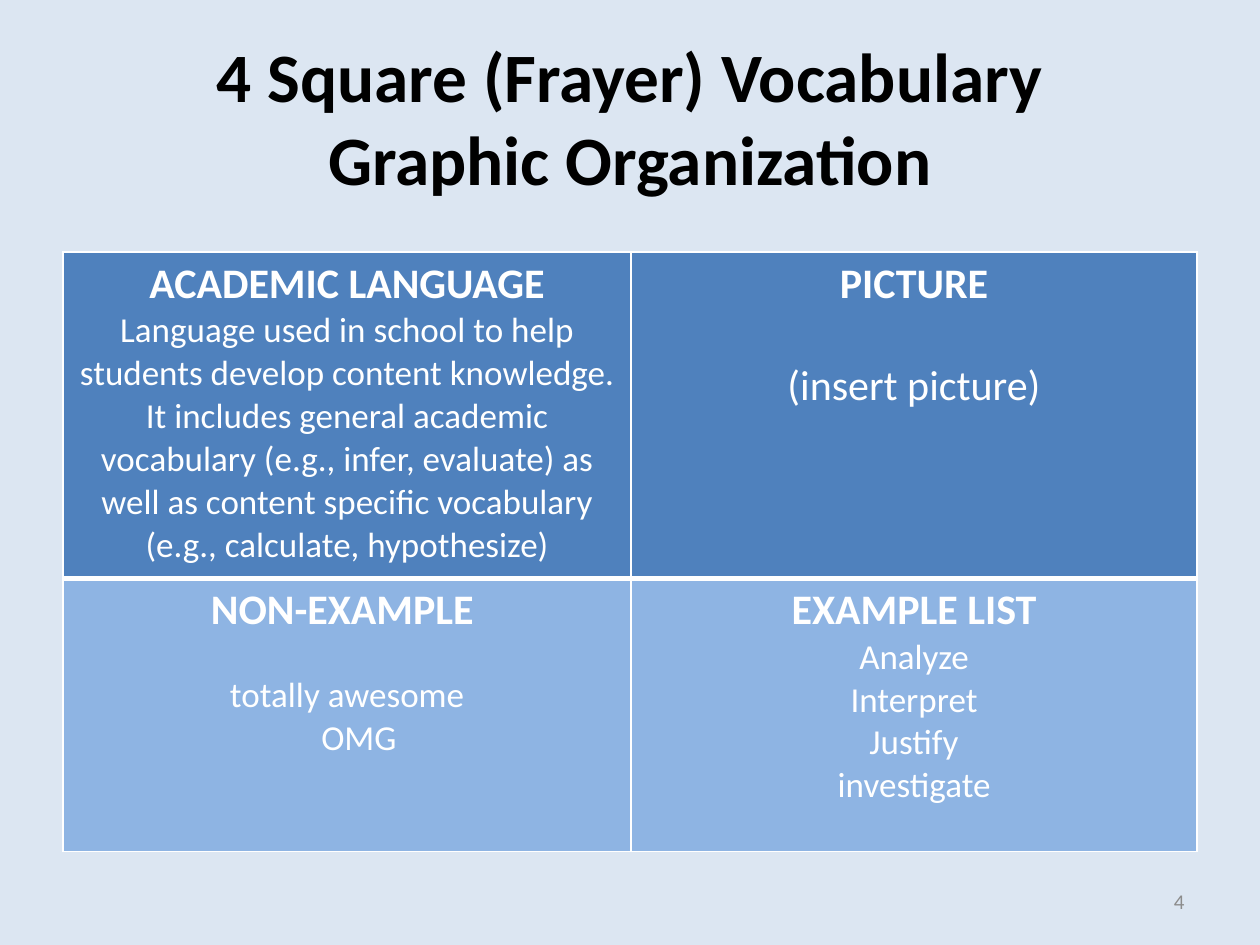
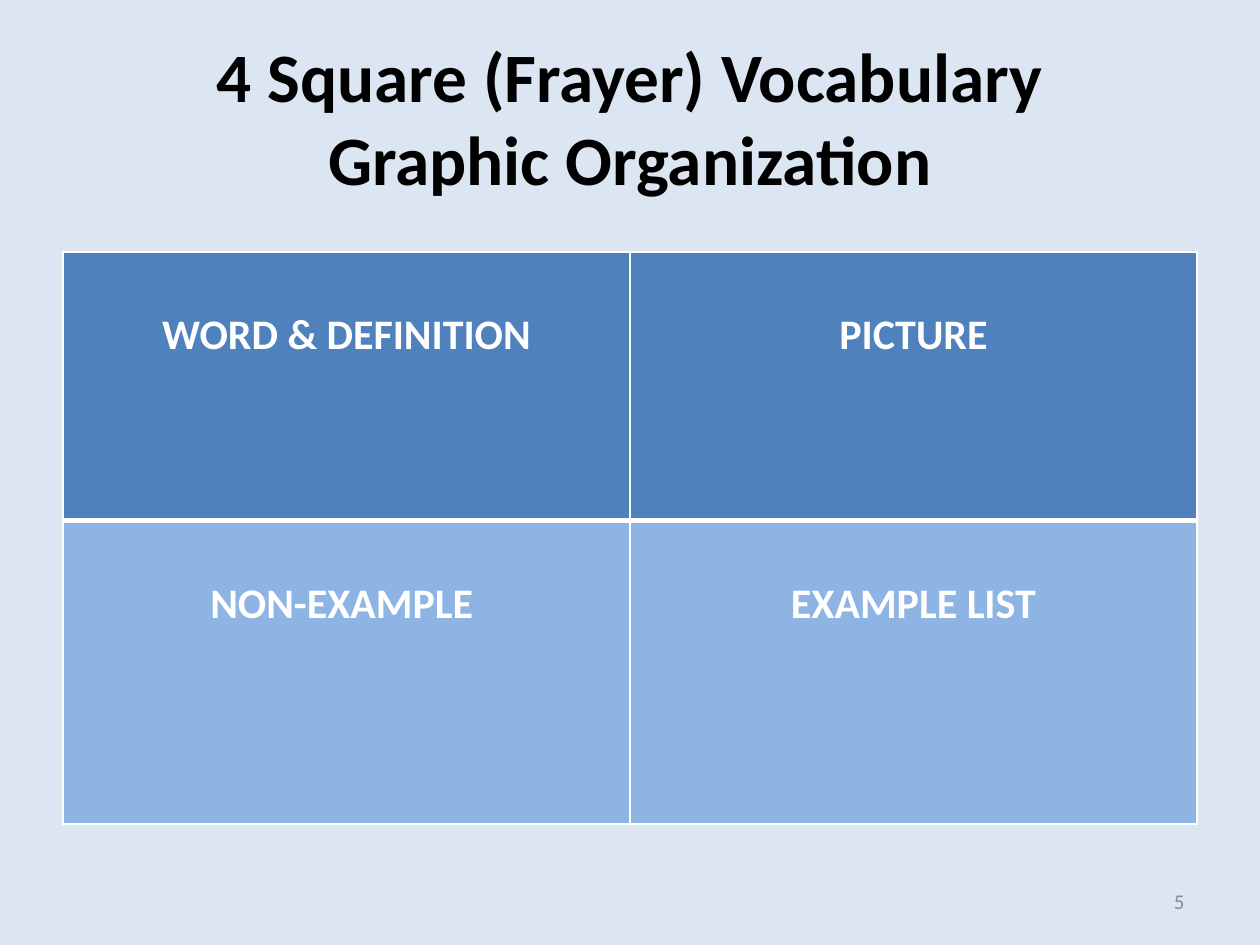
import pptx
import pptx.util
import pptx.dml.color
import pptx.enum.text
import pptx.oxml
import pptx.oxml.ns

Inches, Pt = pptx.util.Inches, pptx.util.Pt
Align = pptx.enum.text.PP_ALIGN
FONT = "Calibri"
WHITE = "FFFFFF"
FILLS = ["4F81BD", "8EB4E3"]
TITLE = "4 Square (Frayer) Vocabulary\vGraphic Organization"
MEANING = (
    "Language used in school to help students develop content knowledge. "
    "It includes general academic vocabulary (e.g., infer, evaluate) as well as "
    "content specific vocabulary (e.g., calculate, hypothesize)"
)

pages = [
    {
        "num": "4", "cols": [4.51, 4.49], "rows": [2.59, 2.17], "top": 0.05,
        "cells": [
            [[("ACADEMIC LANGUAGE", 24, 0), (MEANING, 20, 0)],
             [("PICTURE", 24, 0), ("(insert picture)", 24, 29)]],
            [[("NON-EXAMPLE ", 24, 0), ("totally awesome", 20, 22), ("OMG", 20, 0)],
             [("EXAMPLE LIST", 24, 0), ("Analyze", 20, 0), ("Interpret", 20, 0),
              ("Justify", 20, 0), ("investigate", 20, 0)]],
        ],
    },
    {
        "num": "5", "cols": [4.5, 4.5], "rows": [2.13, 2.41], "top": 0.46,
        "cells": [
            [[("WORD & DEFINITION", 24, 0)], [("PICTURE", 24, 0)]],
            [[("NON-EXAMPLE ", 24, 0)], [("EXAMPLE LIST", 24, 0)]],
        ],
    },
]


def color(code):
    return pptx.dml.color.RGBColor.from_string(code)


def style(para, text, size, code, bold, align):
    para.text = text
    para.alignment = align
    para.font.name = FONT
    para.font.size = Pt(size)
    para.font.bold = bold
    para.font.color.rgb = color(code)


deck = pptx.Presentation()
deck.slide_width, deck.slide_height = Inches(10), Inches(7.5)

for page in pages:
    slide = deck.slides.add_slide(deck.slide_layouts[6])
    slide.background.fill.solid()
    slide.background.fill.fore_color.rgb = color("DCE6F2")

    labels = [
        ((0.5, 0.3, 9, 1.25), TITLE, 39.6, "000000", True, Align.CENTER),
        ((7.17, 6.95, 2.33, 0.4), page["num"], 12, "8C8C8C", False, Align.RIGHT),
    ]
    for place, *look in labels:
        frame = slide.shapes.add_textbox(*map(Inches, place)).text_frame
        frame.word_wrap = True
        frame.vertical_anchor = pptx.enum.text.MSO_ANCHOR.MIDDLE
        style(frame.paragraphs[0], *look)

    grid = slide.shapes.add_table(
        2, 2, Inches(0.5), Inches(2), Inches(9), Inches(sum(page["rows"]))
    ).table
    for col, width in zip(grid.columns, page["cols"]):
        col.width = Inches(width)
    for r, row in enumerate(page["cells"]):
        grid.rows[r].height = Inches(page["rows"][r])
        for c, lines in enumerate(row):
            cell = grid.cell(r, c)
            cell.margin_top = Inches(page["top"])
            props = cell._tc.get_or_add_tcPr()
            for side in "LRTB":
                shared = (r, side) in [(0, "B"), (1, "T")]
                props.append(pptx.oxml.parse_xml(
                    f'<a:ln{side} {pptx.oxml.ns.nsdecls("a")} w="{Pt(3 if shared else 1)}">'
                    f'<a:solidFill><a:srgbClr val="{WHITE}"/></a:solidFill></a:ln{side}>'
                ))
            cell.fill.solid()
            cell.fill.fore_color.rgb = color(FILLS[r])
            frame = cell.text_frame
            for i, (text, size, gap) in enumerate(lines):
                para = frame.add_paragraph() if i else frame.paragraphs[0]
                style(para, text, size, WHITE, i == 0, Align.CENTER)
                para.space_before = Pt(gap)
                if text == "OMG":
                    para.alignment = Align.LEFT
                    para._p.get_or_add_pPr().set("marL", str(Inches(1.95)))

deck.save("out.pptx")
